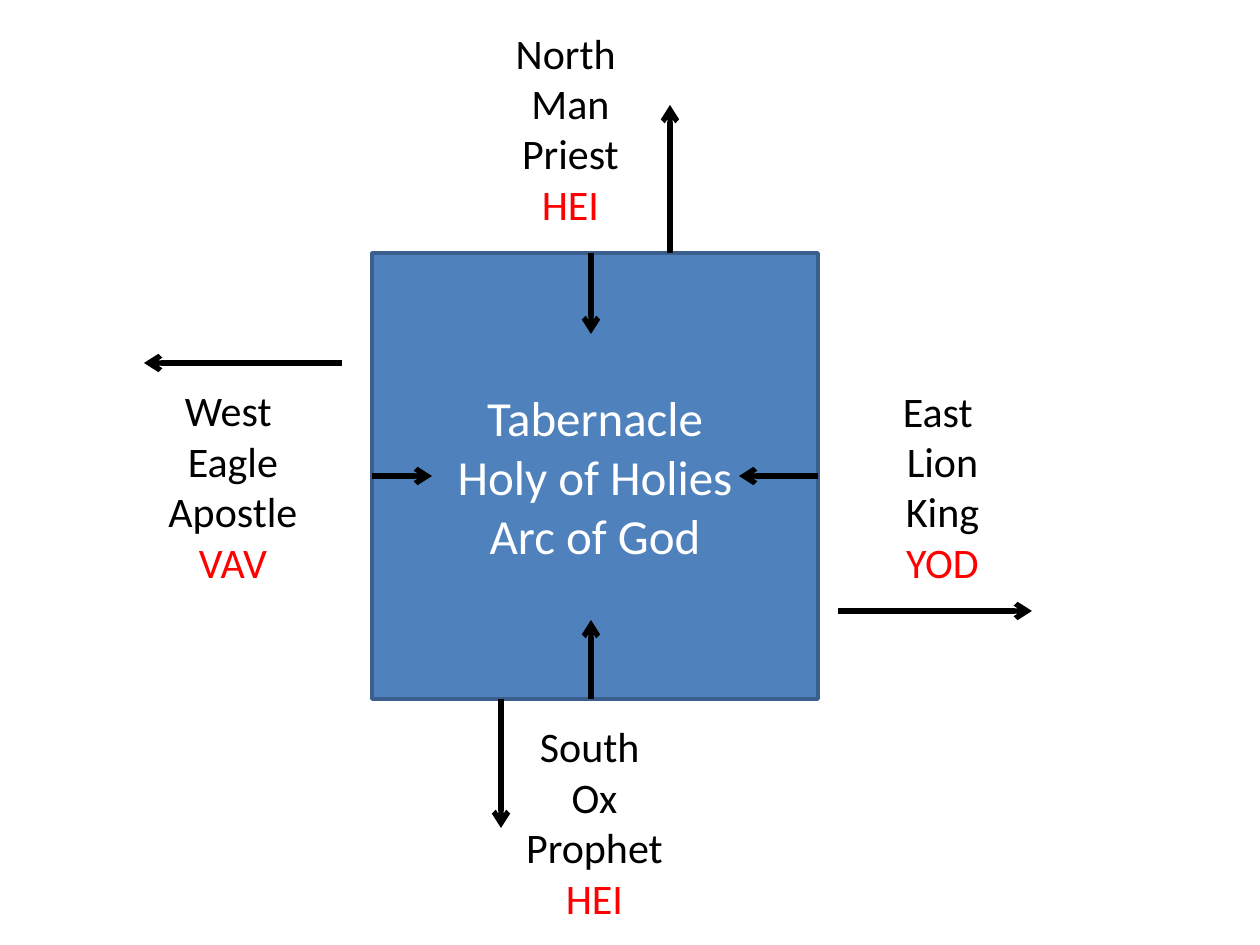
from dataclasses import dataclass

from lxml import etree
from pptx import Presentation
from pptx import util as u
from pptx.dml.color import RGBColor
from pptx.enum import shapes, text
from pptx.oxml.ns import qn

SCALE = 914400 // 126  # EMU per px


@dataclass
class Theme:
    font: str = "Calibri"
    square: RGBColor = RGBColor(0x4F, 0x81, 0xBD)
    border: RGBColor = RGBColor(0x3A, 0x5F, 0x8C)
    white: RGBColor = RGBColor(255, 255, 255)
    black: RGBColor = RGBColor(0, 0, 0)
    red: RGBColor = RGBColor(255, 0, 0)
    center_size: int = 28
    label_size: int = 24
    border_width: int = 2
    arrow_width: int = 3


theme = Theme()


def px(*lengths):
    return [u.Emu(length * SCALE) for length in lengths]


def write_lines(frame, lines, size, colors):
    frame.word_wrap = True
    for index, (line, color) in enumerate(zip(lines, colors)):
        paragraph = frame.paragraphs[0] if index == 0 else frame.add_paragraph()
        paragraph.text = line
        paragraph.alignment = text.PP_ALIGN.CENTER
        paragraph.font.name = theme.font
        paragraph.font.size = u.Pt(size)
        paragraph.font.color.rgb = color


presentation = Presentation()
presentation.slide_width, presentation.slide_height = px(1260, 945)
slide = presentation.slides.add_slide(presentation.slide_layouts[6])

# Central square
left, top, side = 372, 253, 446
right, bottom, middle = left + side, top + side, top + side // 2
square = slide.shapes.add_shape(
    shapes.MSO_SHAPE.RECTANGLE, *px(left, top, side, side))
square.shadow.inherit = False
square.fill.solid()
square.fill.fore_color.rgb = theme.square
square.line.color.rgb = theme.border
square.line.width = u.Pt(theme.border_width)
square.text_frame.vertical_anchor = text.MSO_ANCHOR.MIDDLE
write_lines(square.text_frame, ["Tabernacle", "Holy of Holies", "Arc of God"],
            theme.center_size, [theme.white] * 3)

# Labels for the four directions, last line in red
labels = [
    (501, 27, 139, 198, ["North ", "Man", "Priest", "HEI"]),
    (520, 721, 149, 198, ["South ", "Ox", "Prophet", "HEI"]),
    (888, 385, 109, 198, ["East ", "Lion", "King", "YOD"]),
    (164, 385, 138, 227, ["West ", "Eagle", "Apostle", "VAV"]),
]
for *box, lines in labels:
    frame = slide.shapes.add_textbox(*px(*box)).text_frame
    frame.margin_left = frame.margin_top = 0
    frame.margin_right = frame.margin_bottom = 0
    write_lines(frame, lines, theme.label_size, [theme.black] * 3 + [theme.red])

# Arrows: start, end, and the side of the square they are joined to
arrows = [
    (670, top, 670, 105, None),
    (501, bottom, 501, 828, None),
    (838, 611, 1032, 611, None),
    (342, 363, 144, 363, None),
    (591, top, 591, 334, None),
    (left, middle, 432, middle, 1),
    (right, middle, 739, middle, 3),
    (591, bottom, 591, 620, None),
]
for *ends, joined_side in arrows:
    arrow = slide.shapes.add_connector(shapes.MSO_CONNECTOR.STRAIGHT, *px(*ends))
    if joined_side is not None:
        arrow.begin_connect(square, joined_side)
    arrow.line.color.rgb = theme.black
    arrow.line.width = u.Pt(theme.arrow_width)
    etree.SubElement(arrow.line._get_or_add_ln(), qn("a:tailEnd"), type="arrow")
    etree.SubElement(arrow._element.spPr, qn("a:effectLst"))

presentation.save("out.pptx")
